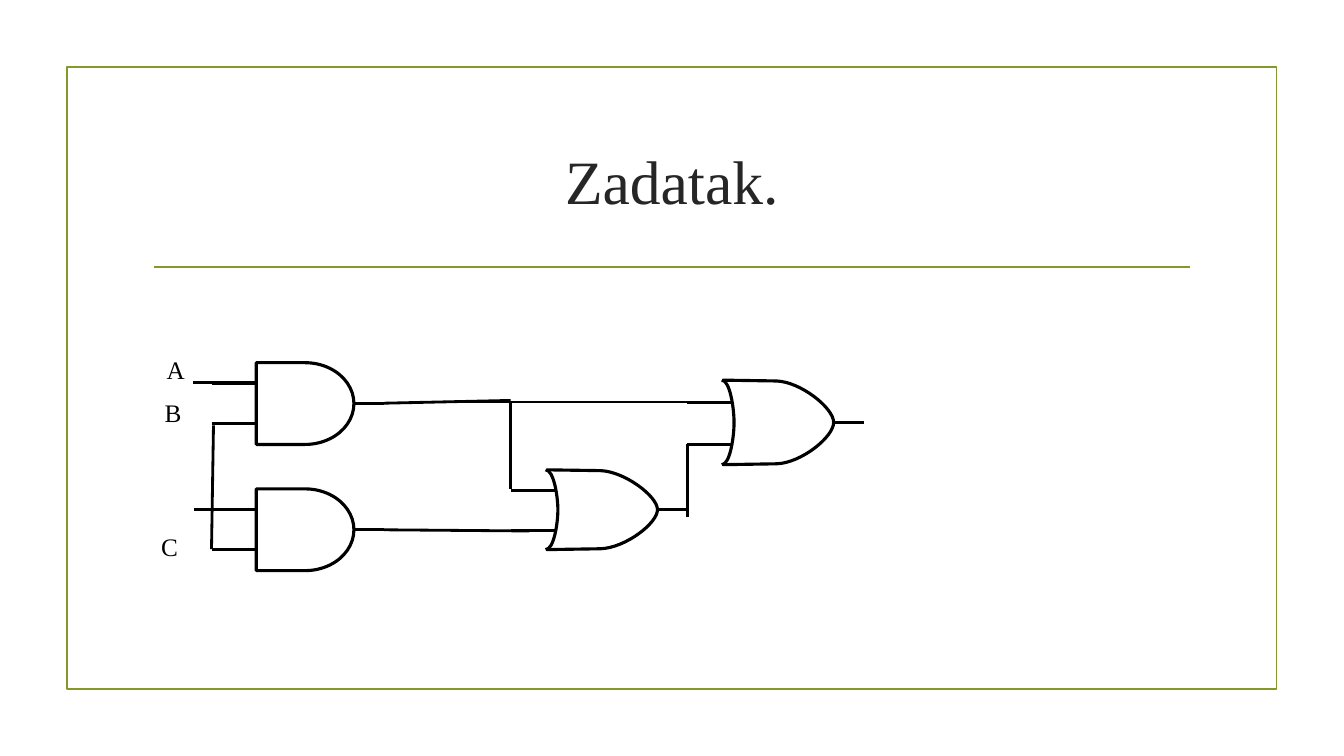
from pptx import Presentation
from pptx.dml.color import RGBColor
from pptx.enum.shapes import MSO_CONNECTOR as CONNECTOR, MSO_SHAPE as SHAPE
from pptx.enum.text import MSO_ANCHOR as ANCHOR, MSO_AUTO_SIZE as AUTO_SIZE, PP_ALIGN as ALIGN
from pptx.oxml.ns import qn
from pptx.util import Cm, Pt
from lxml import etree

FONT = "Times New Roman"
GREEN, BLACK, TITLE_GREY = "83992A", "000000", "262626"


def rgb(code):
    return RGBColor.from_string(code)


def add_wire(x1, y1, x2, y2, width=2.25, color=BLACK):
    wire = shapes.add_connector(CONNECTOR.STRAIGHT, Cm(x1), Cm(y1), Cm(x2), Cm(y2))
    wire.line.width = Pt(width)
    wire.line.color.rgb = rgb(color)
    etree.SubElement(wire._element.spPr, qn("a:effectLst"))
    return wire


deck = Presentation()
deck.slide_width, deck.slide_height = Cm(33.87), Cm(19.05)
slide = deck.slides.add_slide(deck.slide_layouts[5])
shapes = slide.shapes

frame = shapes.add_shape(SHAPE.RECTANGLE, Cm(1.69), Cm(1.69), Cm(30.48), Cm(15.67))
frame.shadow.inherit = False
frame.fill.background()
frame.line.width = Pt(1.25)
frame.line.color.rgb = rgb(GREEN)
add_wire(3.89, 6.73, 30, 6.73, 1.25, GREEN)

title = shapes.title
title.left, title.top, title.width, title.height = Cm(3.6), Cm(2.72), Cm(26.67), Cm(3.63)
title.text_frame.vertical_anchor = ANCHOR.MIDDLE
heading = title.text_frame.paragraphs[0]
heading.alignment = ALIGN.CENTER
heading_run = heading.add_run()
heading_run.text = "Zadatak."
heading_run.font.size = Pt(44)
heading_run.font.name = FONT
heading_run.font.color.rgb = rgb(TITLE_GREY)

for letter, left, top, align in [
    ("A", 3.95, 8.81, ALIGN.LEFT),
    ("B", 3.9, 9.88, ALIGN.LEFT),
    ("C", 3.81, 13.27, ALIGN.CENTER),
]:
    label = shapes.add_textbox(Cm(left), Cm(top), Cm(0.92), Cm(1.02))
    label.text_frame.word_wrap = False
    label.text_frame.auto_size = AUTO_SIZE.SHAPE_TO_FIT_TEXT
    paragraph = label.text_frame.paragraphs[0]
    paragraph.alignment = align
    run = paragraph.add_run()
    run.text = letter
    run.font.size = Pt(18)
    run.font.name = FONT
    run.font.color.rgb = rgb(BLACK)

for top in (9.14, 12.32):
    and_gate = shapes.add_shape(SHAPE.FLOWCHART_DELAY, Cm(6.46), Cm(top), Cm(2.46), Cm(2.06))
    and_gate.shadow.inherit = False
    and_gate.fill.background()
    and_gate.line.width = Pt(2.25)
    and_gate.line.color.rgb = rgb(BLACK)
    for drop in (0.51, 1.53):
        add_wire(5.33, top + drop, 6.48, top + drop)
    and_output = add_wire(8.92, top + 1.03, 9.68, top + 1.03)
    and_output.begin_connect(and_gate, 3)

or_front = [
    (0, 0), (1.35, 0.01),
    (1.96, 0.02), (2.79, 0.33), (2.79, 0.5),
    (2.79, 0.67), (1.98, 0.98), (1.35, 0.99),
    (0, 1),
]
or_back = [
    (-0.03, 1),
    (0.18, 1), (0.28, 0.67), (0.28, 0.5),
    (0.28, 0.34), (0.18, 0), (-0.03, 0),
]

for left, top, height in [(13.78, 11.84, 2.01), (18.22, 9.58, 2.13)]:
    for outline, first_curve in [(or_front, 1), (or_back, 0)]:
        corners = [(Cm(left + x), Cm(top + y * height)) for x, y in outline]
        builder = shapes.build_freeform(*corners[0])
        builder.add_line_segments(corners[1:], close=False)
        or_side = builder.convert_to_shape()
        or_side.shadow.inherit = False
        or_side.fill.background()
        or_side.line.width = Pt(2.25)
        or_side.line.color.rgb = rgb(BLACK)
        segments = list(or_side._element.iter(qn("a:lnTo")))
        for start in (first_curve, first_curve + 3):
            curve = etree.Element(qn("a:cubicBezTo"))
            segments[start].addprevious(curve)
            for segment in segments[start:start + 3]:
                curve.append(segment[0])
                segment.getparent().remove(segment)
    for share in (0.26, 0.76):
        add_wire(left - 0.9, top + share * height, left + 0.25, top + share * height)
    add_wire(left + 2.81, top + height / 2, left + 3.55, top + height / 2)

for ends in [
    (5.33, 13.84, 5.38, 10.72),
    (17.32, 11.18, 17.32, 13.03),
    (4.86, 9.64, 5.89, 9.64),
    (4.9, 12.84, 5.84, 12.84),
    (12.87, 12.32, 12.87, 10.13),
    (9.68, 13.35, 13.34, 13.38),
    (11.66, 10.13, 17.81, 10.13),
    (9.68, 10.16, 12.87, 10.09),
]:
    add_wire(*ends, width=2)

deck.save("out.pptx")
